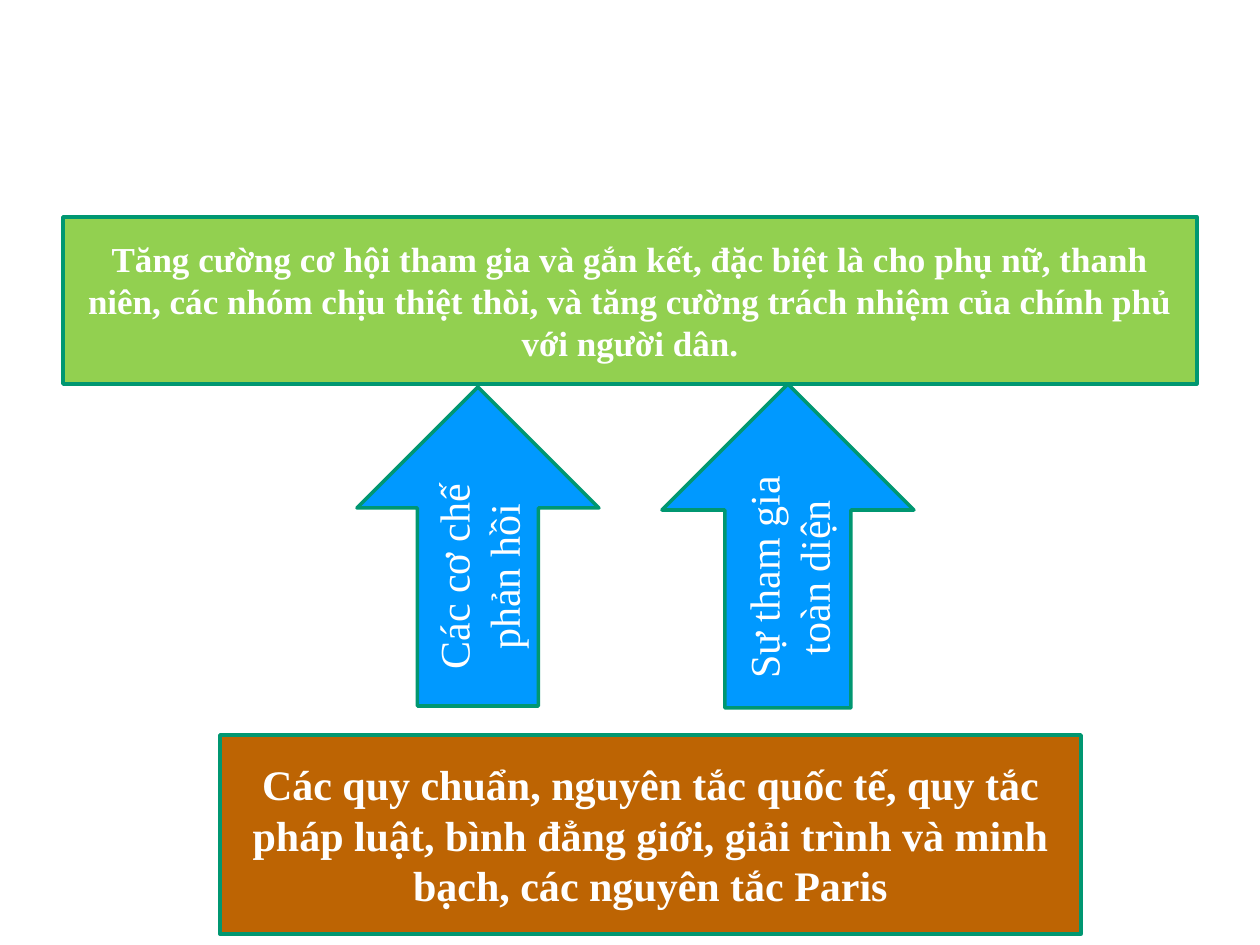
from dataclasses import dataclass

from pptx import Presentation
from pptx.dml.color import RGBColor
from pptx.enum.shapes import MSO_SHAPE
from pptx.enum.text import MSO_ANCHOR, PP_ALIGN
from pptx.util import Emu, Pt

PX_PER_INCH = 126
FONT = "Times New Roman"
WHITE = RGBColor(0xFF, 0xFF, 0xFF)
GREEN = RGBColor(0x92, 0xD0, 0x50)
BLUE = RGBColor(0x00, 0x99, 0xFF)
BROWN = RGBColor(0xBD, 0x64, 0x03)
TEAL = RGBColor(0x00, 0x97, 0x71)


@dataclass
class Block:
    text: str
    left: int
    top: int
    width: int
    height: int
    fill: RGBColor
    size: int = 24
    arrow: bool = False


BLOCKS = [
    # Goal
    Block("Tăng cường cơ hội tham gia và gắn kết, đặc biệt là cho phụ nữ, thanh "
          "niên, các nhóm chịu thiệt thòi, và tăng cường trách nhiệm của chính phủ "
          "với người dân.", 63, 217, 1134, 167, GREEN, size=20),
    # Means leading up to the goal
    Block("Các cơ chế phản hồi", 357, 387, 242, 319, BLUE, arrow=True),
    Block("Sự tham gia toàn diện", 662, 384, 252, 324, BLUE, arrow=True),
    # Foundation
    Block("Các quy chuẩn, nguyên tắc quốc tế, quy tắc pháp luật, bình đẳng giới, "
          "giải trình và minh bạch, các nguyên tắc Paris", 220, 735, 861, 199, BROWN),
]


def px(n: int) -> Emu:
    return Emu(round(n * 914400 / PX_PER_INCH))


def write_text(tf, text: str, *, size: int, bold: bool) -> None:
    tf.word_wrap = True
    tf.vertical_anchor = MSO_ANCHOR.MIDDLE
    p = tf.paragraphs[0]
    p.alignment = PP_ALIGN.CENTER
    r = p.add_run()
    r.text = text
    r.font.name = FONT
    r.font.size = Pt(size)
    r.font.bold = bold
    r.font.color.rgb = WHITE


def draw_block(s, b: Block) -> None:
    kind = MSO_SHAPE.UP_ARROW if b.arrow else MSO_SHAPE.RECTANGLE
    sp = s.shapes.add_shape(kind, px(b.left), px(b.top), px(b.width), px(b.height))
    sp.shadow.inherit = False
    sp.fill.solid()
    sp.fill.fore_color.rgb = b.fill
    sp.line.color.rgb = TEAL
    sp.line.width = Pt(2)
    write_text(sp.text_frame, b.text, size=b.size, bold=not b.arrow)
    if b.arrow:  # text reads upwards
        sp.element.txBody.bodyPr.set("vert", "vert270")


def main() -> None:
    prs = Presentation()
    prs.slide_width, prs.slide_height = px(1260), px(945)
    s = prs.slides.add_slide(prs.slide_layouts[6])
    for b in BLOCKS:
        draw_block(s, b)
    prs.save("out.pptx")


if __name__ == "__main__":
    main()
